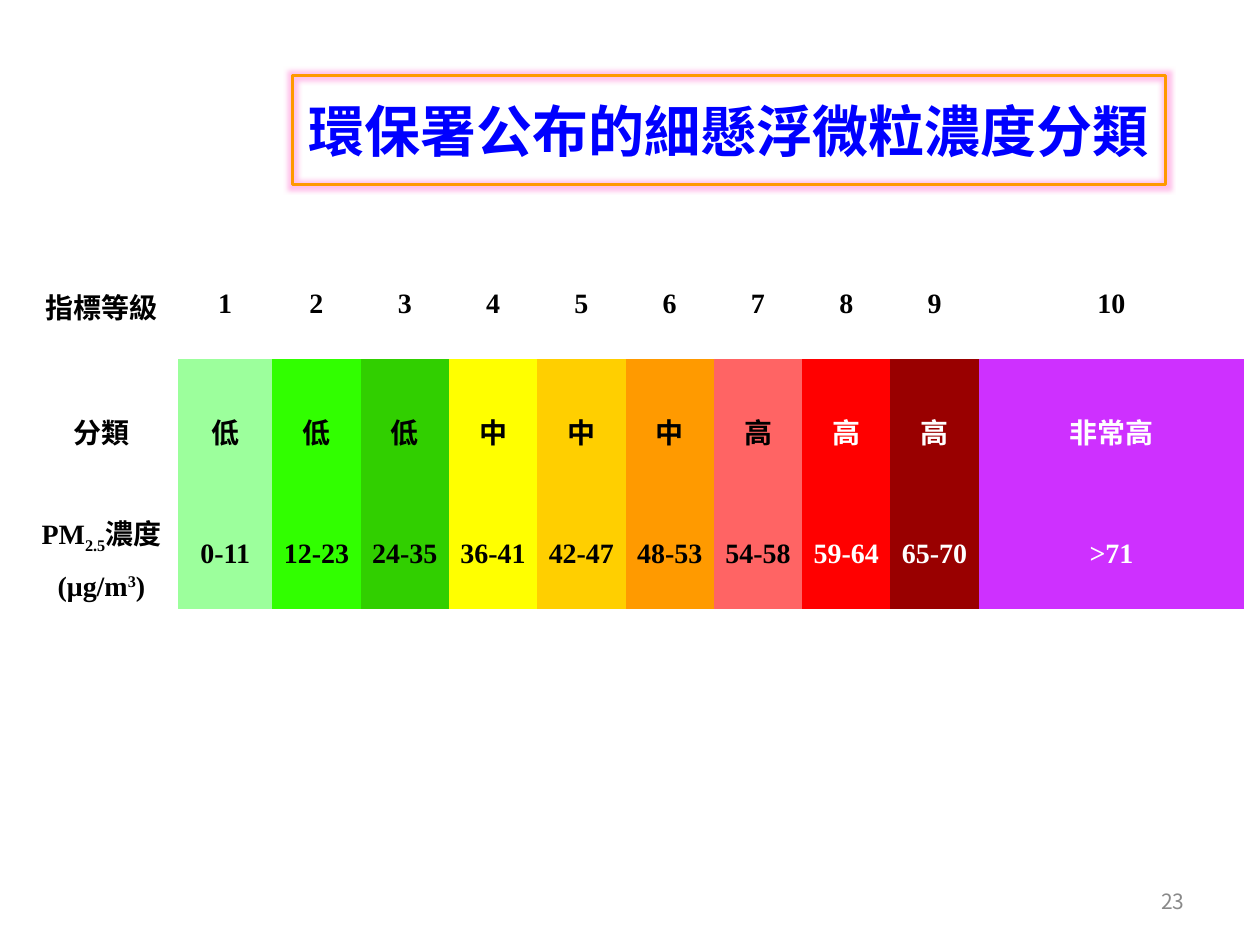
from typing import NamedTuple

from lxml.etree import SubElement
from pptx import Presentation
from pptx.dml.color import RGBColor
from pptx.enum.text import MSO_ANCHOR, PP_ALIGN
from pptx.oxml import parse_xml
from pptx.oxml.ns import qn
from pptx.util import Cm, Pt

SANS = "Noto Sans CJK JP"
SERIF = "Times New Roman"
BLACK, WHITE = "000000", "FFFFFF"
NS = "http://schemas.openxmlformats.org/drawingml/2006/main"
NO_STYLE = "{2D5ABB26-0587-4C30-8999-92F81FD0307C}"


class Level(NamedTuple):
    kind: str
    span: str
    fill: str
    ink: str = BLACK
    width: float = 1.78
    inset: float = 0.1


LEVELS = [
    Level("低", "0-11", "9CFF9C", width=1.9),
    Level("低", "12-23", "31FF00", inset=0.03),
    Level("低", "24-35", "31CF00"),
    Level("中", "36-41", "FFFF00"),
    Level("中", "42-47", "FFCF00"),
    Level("中", "48-53", "FF9A00"),
    Level("高", "54-58", "FF6464"),
    Level("高", "59-64", "FF0000", WHITE),
    Level("高", "65-70", "990000", WHITE),
    Level("非常高", ">71", "CE30FF", WHITE, width=5.35),
]

# Lines of (text, baseline shift in percent)
UNIT = [
    [("PM", 0), ("2.5", -25), ("濃度", 0)],
    [("(μg/m", 0), ("3", 30), (")", 0)],
]


def rgb(code: str) -> RGBColor:
    return RGBColor.from_string(code)


def set_font(para, name: str, size: float, ink: str, bold: bool) -> None:
    font = para.font
    font.name, font.size, font.bold = name, Pt(size), bold
    font.color.rgb = rgb(ink)
    # East Asian face for the Chinese characters
    props = para._p.get_or_add_pPr().find(qn("a:defRPr"))
    face = SubElement(props, qn("a:ea"))
    face.set("typeface", SANS)
    props.find(qn("a:latin")).addnext(face)


def fill_cell(cell, lines: list, fill: str = WHITE, ink: str = BLACK,
              inset: float = 0.1) -> None:
    cell.fill.solid()
    cell.fill.fore_color.rgb = rgb(fill)
    cell.vertical_anchor = MSO_ANCHOR.MIDDLE
    cell.margin_left = cell.margin_right = Cm(inset)
    cell.margin_top = cell.margin_bottom = Cm(inset)
    frame = cell.text_frame
    for i, line in enumerate(lines):
        para = frame.add_paragraph() if i else frame.paragraphs[0]
        para.alignment = PP_ALIGN.CENTER
        para.line_spacing = 1.5
        for text, shift in line:
            run = para.add_run()
            run.text = text
            if shift:
                run._r.get_or_add_rPr().set("baseline", str(shift * 1000))
        set_font(para, SERIF, 16, ink, True)


def add_title(slide) -> None:
    title = slide.shapes.title
    title.left, title.top = Cm(5.9), Cm(1.52)
    title.width, title.height = Cm(17.6), Cm(2.2)
    title.line.color.rgb = rgb("FF9900")
    title.line.width = Pt(1.5)
    # Soft pink glow round the frame
    title._element.spPr.append(parse_xml(
        f'<a:effectLst xmlns:a="{NS}"><a:glow rad="63500">'
        '<a:srgbClr val="FF66CC"><a:alpha val="40000"/></a:srgbClr>'
        '</a:glow></a:effectLst>'))
    frame = title.text_frame
    frame.text = "環保署公布的細懸浮微粒濃度分類"
    frame.vertical_anchor = MSO_ANCHOR.MIDDLE
    para = frame.paragraphs[0]
    para.alignment = PP_ALIGN.CENTER
    set_font(para, SANS, 32, "0000FF", True)


def add_levels(slide) -> None:
    widths = [3.09] + [level.width for level in LEVELS]
    high = 2.52
    table = slide.shapes.add_table(
        3, len(widths), Cm(0.5), Cm(4.72), Cm(sum(widths)), Cm(3 * high)).table
    table.first_row = table.horz_banding = False
    table._tbl.tblPr.find(qn("a:tableStyleId")).text = NO_STYLE
    for col, width in zip(table.columns, widths):
        col.width = Cm(width)
    for row in table.rows:
        row.height = Cm(high)

    # Row headings
    heads = [[[("指標等級", 0)]], [[("分類", 0)]], UNIT]
    for r, lines in enumerate(heads):
        fill_cell(table.cell(r, 0), lines)

    # One column for each level
    for c, level in enumerate(LEVELS, 1):
        fill_cell(table.cell(0, c), [[(str(c), 0)]], inset=level.inset)
        for r, text in enumerate((level.kind, level.span), 1):
            fill_cell(table.cell(r, c), [[(text, 0)]],
                      level.fill, level.ink, level.inset)


def add_number(slide) -> None:
    box = slide.shapes.add_textbox(Cm(18.2), Cm(17.65), Cm(5.93), Cm(1.02))
    frame = box.text_frame
    frame.word_wrap = True
    frame.vertical_anchor = MSO_ANCHOR.MIDDLE
    frame.text = "23"
    para = frame.paragraphs[0]
    para.alignment = PP_ALIGN.RIGHT
    set_font(para, SANS, 12, "898989", False)


def main() -> None:
    deck = Presentation()
    deck.slide_width, deck.slide_height = Cm(25.4), Cm(19.05)
    slide = deck.slides.add_slide(deck.slide_layouts[5])
    add_title(slide)
    add_levels(slide)
    add_number(slide)
    deck.save("out.pptx")


if __name__ == "__main__":
    main()
